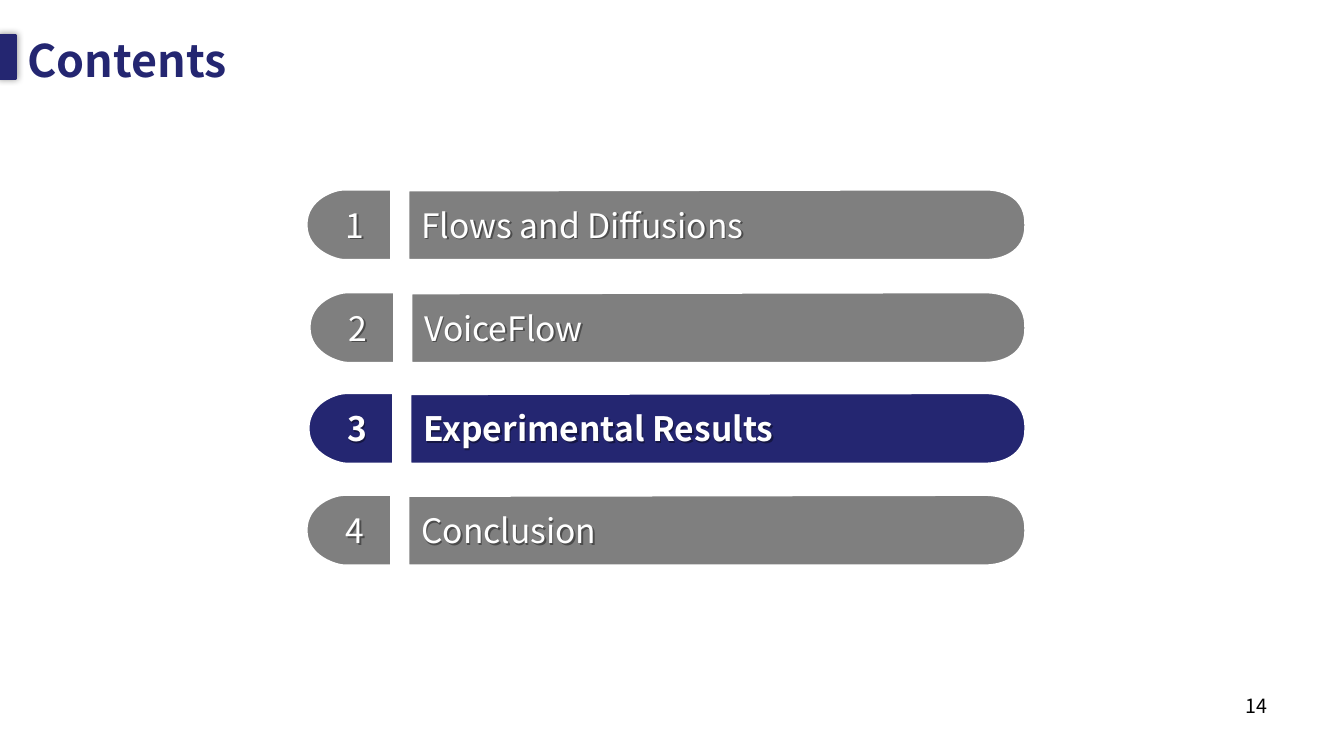
"""Build the contents slide with four agenda rows, the third one highlighted."""
from dataclasses import dataclass

from lxml import etree
from pptx import Presentation
from pptx import util as u
from pptx.dml.color import RGBColor
from pptx.enum import shapes, text
from pptx.oxml import ns

FONT = "Noto Sans CJK SC"
COLORS = {"navy": "242671", "gray": "7F7F7F", "white": "FFFFFF", "black": "000000"}
HEIGHT = 0.7

Point = tuple[float, float]
Segment = tuple[Point, ...]


@dataclass(frozen=True)
class AgendaRow:
    label: str
    left: float
    top: float
    label_width: float
    active: bool = False


@dataclass(frozen=True)
class TextStyle:
    size: int
    color: str = "white"
    bold: bool = False
    align: text.PP_ALIGN = text.PP_ALIGN.LEFT
    anchor: text.MSO_ANCHOR = text.MSO_ANCHOR.MIDDLE
    inset_y: float = 0.05
    shadow: bool = False


ROWS = [
    AgendaRow("Flows and Diffusions", 3.04, 1.88, 4.39),
    AgendaRow("VoiceFlow", 3.07, 2.9, 5.85),
    AgendaRow("Experimental Results", 3.06, 3.9, 5.85, active=True),
    AgendaRow("Conclusion", 3.04, 4.91, 6.16),
]


def rgb(name: str) -> RGBColor:
    return RGBColor.from_string(COLORS[name])


def add_shadow(sp, blur: float, dist: float) -> None:
    spPr = sp._element.spPr
    effects = etree.SubElement(spPr, ns.qn("a:effectLst"))
    outer = etree.SubElement(effects, ns.qn("a:outerShdw"), blurRad=str(u.Pt(blur)),
                             dist=str(u.Pt(dist)), dir="2700000")
    color = etree.SubElement(outer, ns.qn("a:srgbClr"), val=COLORS["black"])
    etree.SubElement(color, ns.qn("a:alpha"), val="40000")


def add_text(s, words: str, left: float, top: float, width: float, height: float,
             style: TextStyle) -> None:
    sp = s.shapes.add_textbox(*map(u.Inches, (left, top, width, height)))
    tf = sp.text_frame
    tf.word_wrap = True
    tf.vertical_anchor = style.anchor
    tf.margin_top = tf.margin_bottom = u.Inches(style.inset_y)
    p = tf.paragraphs[0]
    p.text = words
    p.alignment = style.align
    p.font.name = FONT
    p.font.size = u.Pt(style.size)
    p.font.bold = style.bold
    p.font.color.rgb = rgb(style.color)
    if style.shadow:
        add_shadow(sp, 0, 1.5)


def add_outline(s, start: Point, segments: list[Segment], left: float, top: float,
                color: str) -> None:
    placed = [(u.Inches(left + x), u.Inches(top + y))
              for x, y in (start, *(pt for segment in segments for pt in segment))]
    builder = s.shapes.build_freeform(*placed[0])
    builder.add_line_segments(placed[1:], close=True)
    sp = builder.convert_to_shape()

    lines = iter(list(sp._element.iter(ns.qn("a:lnTo"))))
    for segment in segments:
        first, *others = [next(lines) for _ in segment]
        if others:
            curve = etree.Element(ns.qn("a:cubicBezTo"))
            first.addprevious(curve)
            for line in (first, *others):
                curve.append(line[0])
                line.getparent().remove(line)

    sp.shadow.inherit = False
    sp.fill.solid()
    sp.fill.fore_color.rgb = rgb(color)
    sp.line.color.rgb = rgb("white")
    sp.line.width = u.Pt(1.5)


def add_row(s, number: int, row: AgendaRow) -> None:
    color = "navy" if row.active else "gray"
    bar_left = row.left + 1.01
    tip = 9.77 - bar_left
    add_outline(s, (0, 0.01),
                [((0, HEIGHT),),
                 ((0.2, HEIGHT), (tip - 0.16, HEIGHT), (tip, HEIGHT)),
                 ((tip + 0.16, HEIGHT), (tip + 0.4, 0.63), (tip + 0.4, 0.36)),
                 ((tip + 0.41, 0.08), (tip + 0.19, 0), (tip, 0)),
                 ((tip - 0.19, 0), (0.2, 0.01), (0, 0.01))],
                bar_left, row.top, color)
    add_outline(s, (0.84, 0),
                [((0.84, 0.35), (0.84, HEIGHT), (0.84, HEIGHT)),
                 ((0.37, HEIGHT),),
                 ((0.31, HEIGHT), (0, 0.62), (0, 0.35)),
                 ((0, 0.09), (0.28, 0), (0.37, 0)),
                 ((0.84, 0),)],
                row.left, row.top, color)
    add_text(s, str(number), row.left + 0.27, row.top + 0.1, 0.42, 0.5,
             TextStyle(24, bold=row.active, align=text.PP_ALIGN.CENTER, shadow=True))
    add_text(s, row.label, bar_left + 0.03, row.top + 0.12, row.label_width, 0.46,
             TextStyle(24, bold=row.active, inset_y=0.03, shadow=True))


def main() -> None:
    prs = Presentation()
    prs.slide_width, prs.slide_height = u.Inches(13.33), u.Inches(7.5)
    s = prs.slides.add_slide(prs.slide_layouts[6])

    marker = s.shapes.add_shape(shapes.MSO_SHAPE.RECTANGLE,
                                *map(u.Inches, (-0.01, 0.35, 0.17, 0.43)))
    marker.fill.solid()
    marker.fill.fore_color.rgb = rgb("navy")
    marker.line.color.rgb = rgb("navy")
    marker.line.width = u.Pt(2)
    add_shadow(marker, 5, 0)

    add_text(s, "Contents", 0.17, -0.13, 12.95, 1.45,
             TextStyle(32, color="navy", bold=True))
    for number, row in enumerate(ROWS, start=1):
        add_row(s, number, row)
    add_text(s, "14", 9.56, 6.83, 3.11, 0.52,
             TextStyle(14, color="black", align=text.PP_ALIGN.RIGHT,
                       anchor=text.MSO_ANCHOR.TOP))
    prs.save("out.pptx")


if __name__ == "__main__":
    main()
